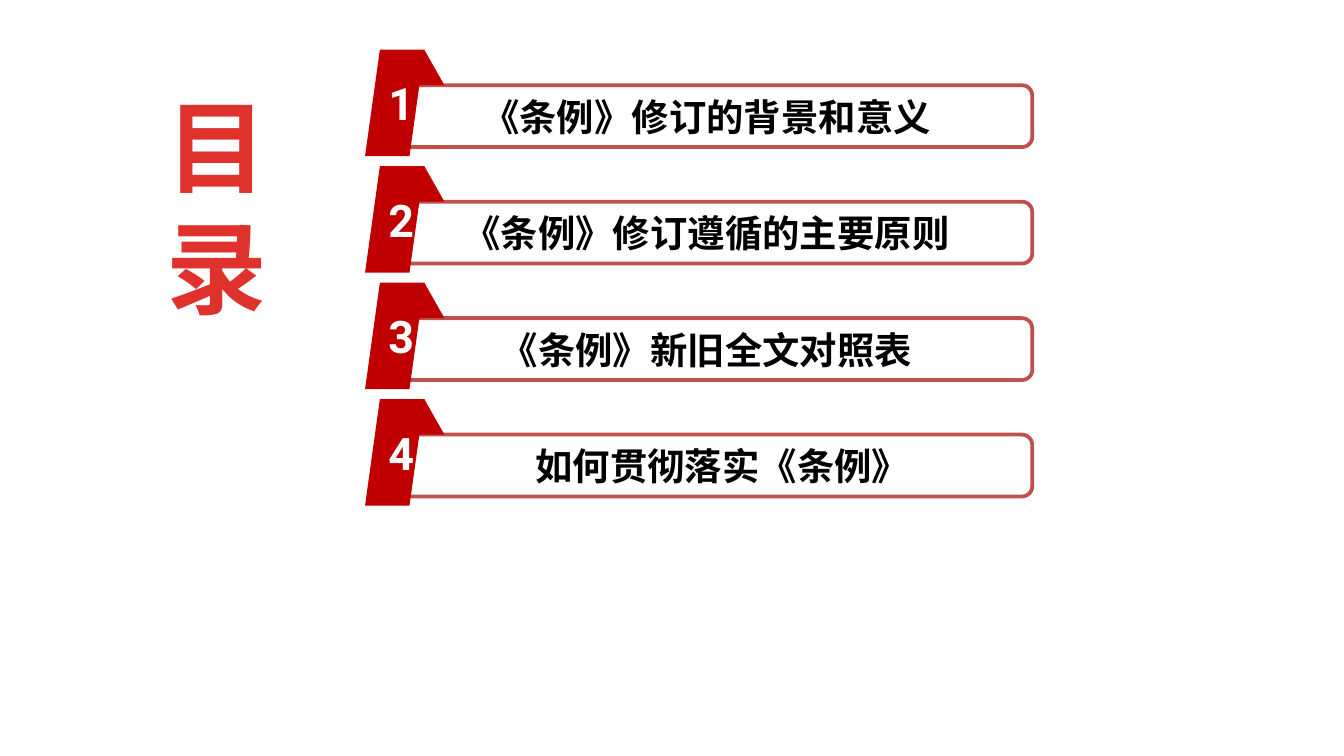
from dataclasses import dataclass

from pptx import Presentation
from pptx.dml.color import RGBColor
from pptx.enum.shapes import MSO_SHAPE as Shape
from pptx.enum.text import MSO_ANCHOR as Anchor, MSO_AUTO_SIZE as AutoSize, PP_ALIGN as Align
from pptx.oxml.ns import qn
from pptx.util import Cm, Pt

CJK, LATIN = "Noto Sans CJK SC", "Roboto"
RED, BORDER, WHITE, BLACK = "C00000", "C0504D", "FFFFFF", "000000"
TITLE_RED = "E0322D"
FIRST_TOP, ROW_STEP = 0.94, 2.2


@dataclass
class Entry:
    text: str
    indent: float = 0  # extra left inset in cm


ENTRIES = [
    Entry("《条例》修订的背景和意义"),
    Entry("《条例》修订遵循的主要原则"),
    Entry("《条例》新旧全文对照表"),
    Entry("如何贯彻落实《条例》", indent=0.6),
]


def rgb(value: str) -> RGBColor:
    return RGBColor.from_string(value)


def write(sp, text: str, *, size: float, font: str, color: str, align=Align.CENTER,
          anchor=Anchor.MIDDLE, wrap: bool = True, spacing: float = 0):
    """Write one bold paragraph into a shape and return its text frame."""
    tf = sp.text_frame
    tf.auto_size = AutoSize.NONE
    tf.word_wrap = wrap
    tf.vertical_anchor = anchor
    p = tf.paragraphs[0]
    p.alignment = align
    r = p.add_run()
    r.text = text
    r.font.size, r.font.bold, r.font.name = Pt(size), True, font
    r.font.color.rgb = rgb(color)
    r_pr = r.font._element
    r_pr.get_or_add_latin().addnext(r_pr.makeelement(qn("a:ea"), {"typeface": font}))
    if spacing:
        r_pr.set("spc", str(round(spacing * 100)))
    return tf


def add_block(slide, kind, left: float, top: float, width: float, height: float,
              fill: str, line: str = ""):
    sp = slide.shapes.add_shape(kind, Cm(left), Cm(top), Cm(width), Cm(height))
    sp.shadow.inherit = False
    sp.fill.solid()
    sp.fill.fore_color.rgb = rgb(fill)
    if line:
        sp.line.color.rgb = rgb(line)
        sp.line.width = Pt(2)
    else:
        sp.line.fill.background()
    return sp


def add_entry(slide, number: int, entry: Entry) -> None:
    top = FIRST_TOP + (number - 1) * ROW_STEP
    # Outlined bar with the heading
    bar = add_block(slide, Shape.ROUNDED_RECTANGLE, 7.2, top + 0.67, 12.31, 1.17, WHITE, BORDER)
    tf = write(bar, entry.text, size=20, font=CJK, color=BLACK)
    tf.margin_left = Cm(0.25 + entry.indent)
    # Slanted number tab and its folded corner
    tab = add_block(slide, Shape.PARALLELOGRAM, 6.9, top, 1.12, 2.01, RED)
    tf = write(tab, str(number), size=24, font=LATIN, color=WHITE, wrap=False)
    tf.margin_left, tf.margin_right = Cm(0.25), 0
    add_block(slide, Shape.ISOSCELES_TRIANGLE, 7.64, top, 0.76, 0.67, RED)


def main() -> None:
    prs = Presentation()
    prs.slide_width, prs.slide_height = Cm(25.4), Cm(14.28)
    slide = prs.slides.add_slide(prs.slide_layouts[5])

    # Title, one character per line in a narrow box
    title = slide.shapes.title
    title.left, title.top, title.width, title.height = Cm(2.9), Cm(1.47), Cm(2.39), Cm(4.88)
    write(title, "目录", size=54, font=CJK, color=TITLE_RED, align=Align.LEFT,
          anchor=Anchor.TOP, spacing=0.5)

    # Contents rows
    for number, entry in enumerate(ENTRIES, start=1):
        add_entry(slide, number, entry)

    prs.save("out.pptx")


if __name__ == "__main__":
    main()
